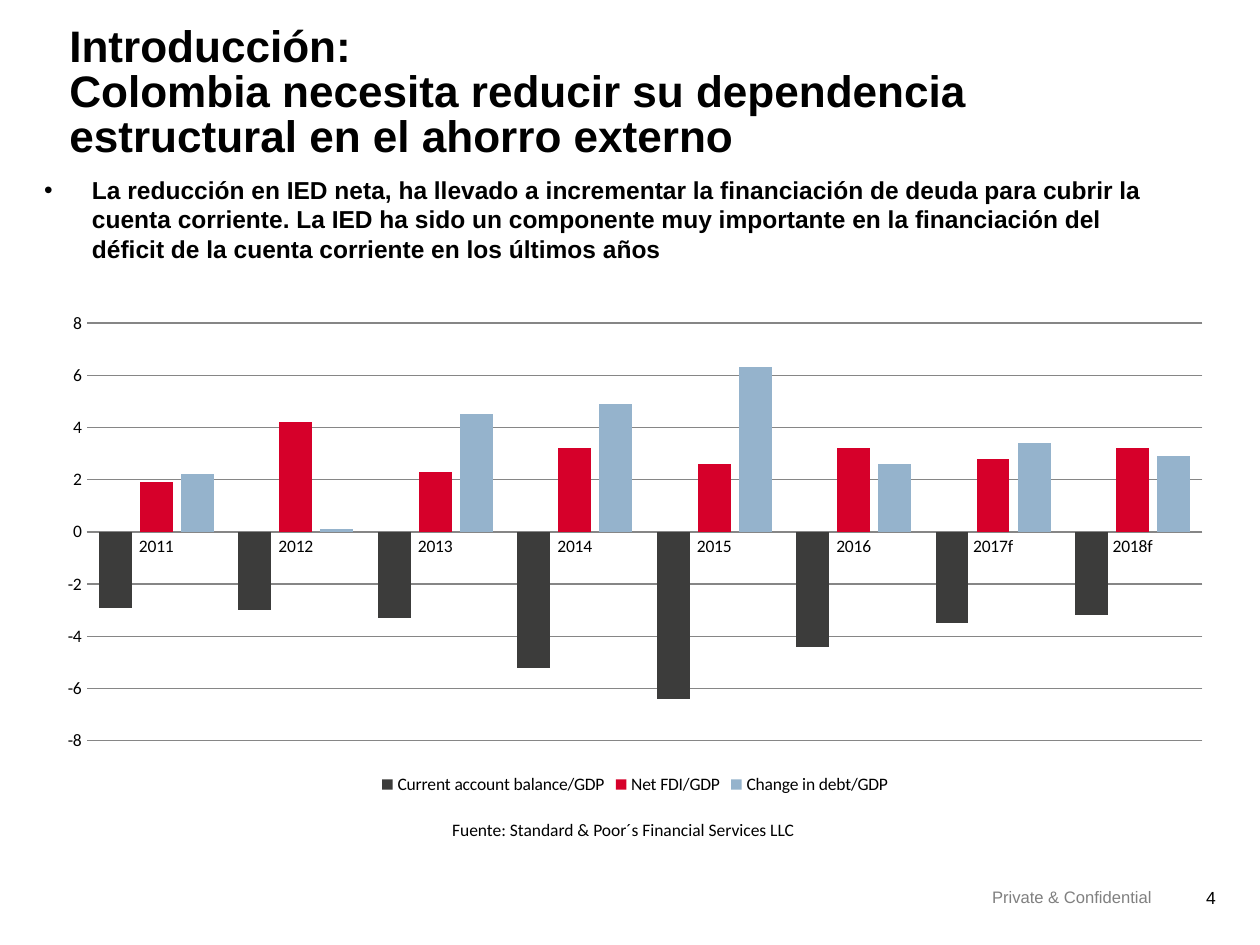
from dataclasses import dataclass

from lxml.etree import SubElement
from pptx import Presentation
from pptx.chart.data import CategoryChartData
from pptx.dml.color import RGBColor
from pptx.enum.chart import XL_CHART_TYPE as ChartType, XL_LEGEND_POSITION as LegendPosition
from pptx.enum.chart import XL_TICK_MARK as TickMark
from pptx.enum.text import MSO_ANCHOR as Anchor, MSO_AUTO_SIZE as AutoSize, PP_ALIGN as Align
from pptx.oxml.ns import qn
from pptx.util import Inches, Pt


@dataclass(frozen=True)
class Theme:
    heading_font: str = "Arial"
    chart_font: str = "Calibri"
    black: str = "000000"
    gray: str = "808080"
    grid: str = "868686"
    series: tuple = ("3C3C3B", "D6002A", "95B3CC")
    title_size: float = 25.2
    body_size: float = 14
    small_size: float = 10
    footer_size: float = 9.5


theme = Theme()

presentation = Presentation()
presentation.slide_width = Inches(10)
presentation.slide_height = Inches(7.5)
width, height = presentation.slide_width, presentation.slide_height
slide = presentation.slides.add_slide(presentation.slide_layouts[5])


def area(left, top, wide, high):
    """Turn shares of the slide's size into a frame."""
    return int(left * width), int(top * height), int(wide * width), int(high * height)


def write(shape, text, font, size, color=theme.black, bold=False, align=Align.LEFT, margin=0):
    frame = shape.text_frame
    frame.word_wrap = True
    frame.auto_size = AutoSize.NONE
    frame.vertical_anchor = Anchor.TOP
    frame.margin_left = frame.margin_right = Inches(margin)
    frame.margin_top = frame.margin_bottom = Inches(margin / 2)
    frame.text = text
    paragraph = frame.paragraphs[0]
    paragraph.alignment = align
    for run in paragraph.runs:
        run.font.name = font
        run.font.size = Pt(size)
        run.font.bold = bold
        run.font.color.rgb = RGBColor.from_string(color)
    return paragraph


# Title
title = slide.shapes.title
title.left, title.top, title.width, title.height = area(0.055, 0.028, 0.89, 0.127)
heading = write(
    title,
    "Introducción:\vColombia necesita reducir su dependencia estructural en el ahorro externo",
    theme.heading_font, theme.title_size, bold=True)
heading.line_spacing = 0.85

# Bulleted message
message = write(
    slide.shapes.add_textbox(*area(0.035, 0.185, 0.888, 0.127)),
    "La reducción en IED neta, ha llevado a incrementar la financiación de deuda para cubrir "
    "la cuenta corriente. La IED ha sido un componente muy importante en la financiación del "
    "déficit de la cuenta corriente en los últimos años",
    theme.heading_font, theme.body_size, bold=True)
properties = message._p.get_or_add_pPr()
properties.set("marL", str(Inches(0.38)))
properties.set("indent", str(-Inches(0.38)))
SubElement(properties, qn("a:buFont"), typeface=theme.heading_font)
SubElement(properties, qn("a:buChar"), char="•")

# Chart data
data = CategoryChartData(number_format="General")
data.categories = ["2011", "2012", "2013", "2014", "2015", "2016", "2017f", "2018f"]
data.add_series("Current account balance/GDP", (-2.9, -3, -3.3, -5.2, -6.4, -4.4, -3.5, -3.2))
data.add_series("Net FDI/GDP", (1.9, 4.2, 2.3, 3.2, 2.6, 3.2, 2.8, 3.2))
data.add_series("Change in debt/GDP", (2.2, 0.1, 4.5, 4.9, 6.3, 2.6, 3.4, 2.9))

# Chart
chart = slide.shapes.add_chart(
    ChartType.COLUMN_CLUSTERED, *area(0.035, 0.321, 0.938, 0.525), data).chart
chart.has_title = False
chart.font.name = theme.chart_font
chart.font.size = Pt(theme.small_size)
chart.font.color.rgb = RGBColor.from_string(theme.black)
chart.has_legend = True
chart.legend.position = LegendPosition.BOTTOM
chart.legend.include_in_layout = False

plot = chart.plots[0]
plot.vary_by_categories = False
plot.gap_width = 75
plot.overlap = -25
for series, color in zip(plot.series, theme.series):
    series.invert_if_negative = False
    series.format.fill.solid()
    series.format.fill.fore_color.rgb = RGBColor.from_string(color)

# Axes
values = chart.value_axis
values.minimum_scale, values.maximum_scale, values.major_unit = -8, 8, 2
values.has_major_gridlines = True
values.format.line.fill.background()
for axis in (values, chart.category_axis):
    axis.major_tick_mark = axis.minor_tick_mark = TickMark.NONE
for line in (values.major_gridlines.format.line, chart.category_axis.format.line):
    line.color.rgb = RGBColor.from_string(theme.grid)
    line.width = Pt(0.75)

# Source line
source = slide.shapes.add_textbox(*area(0.349, 0.86, 0.302, 0.036))
write(source, "Fuente: Standard & Poor´s Financial Services LLC",
      theme.chart_font, theme.small_size, margin=0.1)
source.text_frame.word_wrap = False
source.text_frame.auto_size = AutoSize.SHAPE_TO_FIT_TEXT

# Footer and page number
write(slide.shapes.add_textbox(*area(0.594, 0.939, 0.32, 0.032)), "Private & Confidential",
      theme.heading_font, theme.footer_size, theme.gray, align=Align.RIGHT)
write(slide.shapes.add_textbox(*area(0.942, 0.939, 0.023, 0.037)), "4",
      theme.heading_font, theme.small_size, align=Align.RIGHT)

presentation.save("out.pptx")
